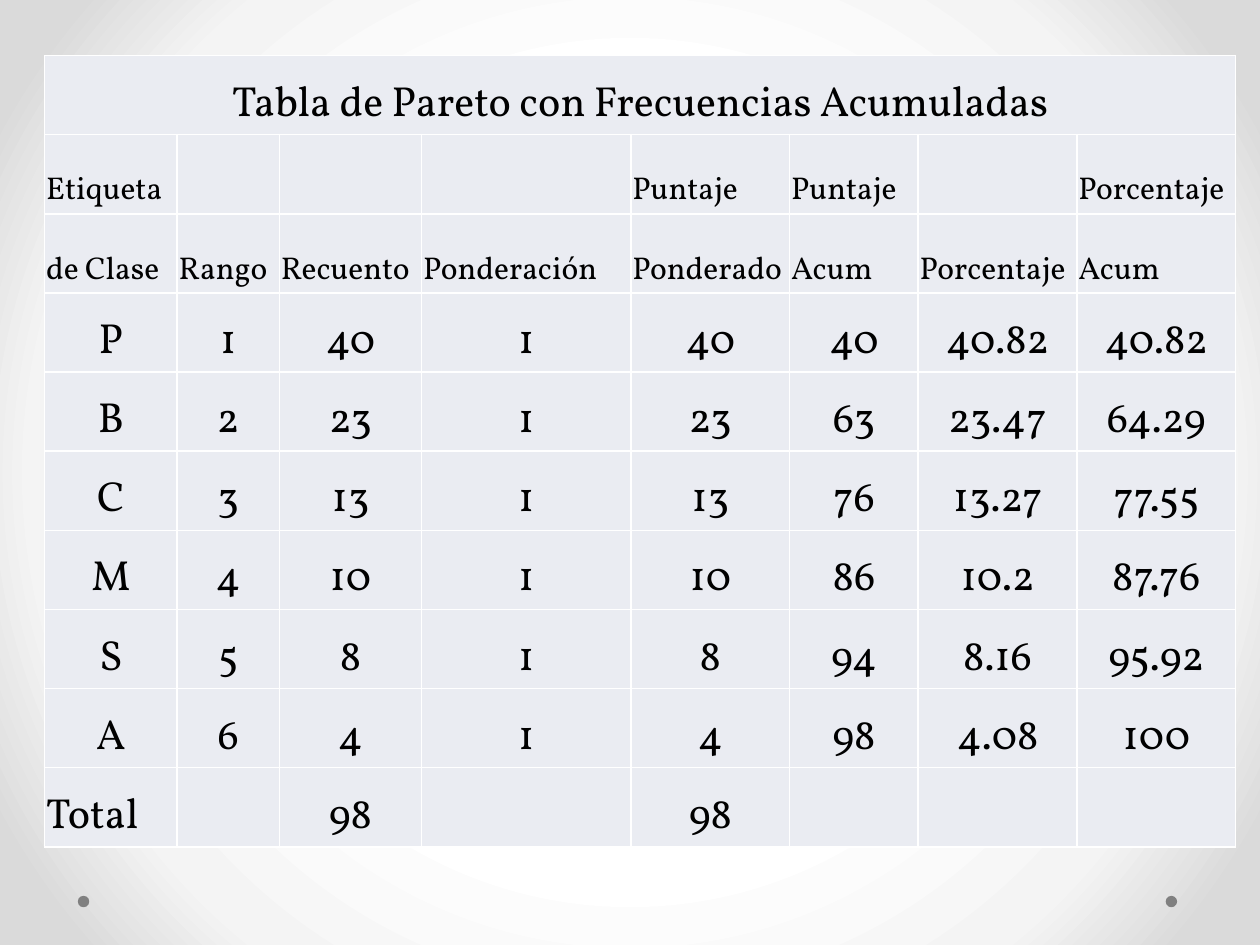
from lxml import etree
from pptx import Presentation
from pptx.dml.color import RGBColor
from pptx.enum.shapes import MSO_SHAPE
from pptx.enum.text import MSO_ANCHOR, PP_ALIGN
from pptx.oxml import parse_xml
from pptx.oxml.ns import nsdecls, qn
from pptx.util import Cm, Pt

OVAL = MSO_SHAPE.OVAL
BOTTOM = MSO_ANCHOR.BOTTOM
LEFT, CENTER = PP_ALIGN.LEFT, PP_ALIGN.CENTER

FONT = "Vollkorn"
COLORS = {
    "text": "000000",
    "cell": "EAECF2",
    "border": "FFFFFF",
    "dot": "808080",
    "center": "FFFFFF",
    "middle": "F4F4F4",
    "edge": "DADADA",
}
BACKGROUND_STOPS = [(50, "center"), (76, "middle"), (92, "edge")]

TITLE = "Tabla de Pareto con Frecuencias Acumuladas"
HEADERS = [
    ["Etiqueta", "", "", "", "Puntaje", "Puntaje", "", "Porcentaje"],
    ["de Clase", "Rango", "Recuento", "Ponderación",
     "Ponderado", "Acum", "Porcentaje", "Acum"],
]
CLASSES = [
    ["P", "1", "40", "1", "40", "40", "40.82", "40.82"],
    ["B", "2", "23", "1", "23", "63", "23.47", "64.29"],
    ["C", "3", "13", "1", "13", "76", "13.27", "77.55"],
    ["M", "4", "10", "1", "10", "86", "10.2", "87.76"],
    ["S", "5", "8", "1", "8", "94", "8.16", "95.92"],
    ["A", "6", "4", "1", "4", "98", "4.08", "100"],
]
TOTALS = ["Total", "", "98", "", "98", "", "", ""]
COLUMN_WIDTHS = [2.67, 2.06, 2.87, 4.22, 3.2, 2.59, 3.2, 3.2]
TABLE_HEIGHT = 15.95


def set_background(slide):
    """Fill the slide with a circular gradient around its center."""
    slide.background.fill.solid()
    stops = "".join(
        f'<a:gs pos="{position * 1000}"><a:srgbClr val="{COLORS[name]}"/></a:gs>'
        for position, name in BACKGROUND_STOPS
    )
    gradient = parse_xml(
        f'<a:gradFill {nsdecls("a")} rotWithShape="1"><a:gsLst>{stops}</a:gsLst>'
        '<a:path path="circle">'
        '<a:fillToRect l="50000" t="50000" r="50000" b="50000"/>'
        "</a:path></a:gradFill>"
    )
    properties = slide.element.find(".//" + qn("p:bgPr"))
    properties.replace(properties[0], gradient)


def add_dot(slide, left):
    shape = slide.shapes.add_shape(OVAL, Cm(left), Cm(18.06), Cm(0.23), Cm(0.23))
    shape.shadow.inherit = False
    shape.fill.solid()
    shape.fill.fore_color.rgb = RGBColor.from_string(COLORS["dot"])
    shape.line.fill.background()


def set_borders(cell):
    properties = cell._tc.get_or_add_tcPr()
    for index, side in enumerate(("a:lnL", "a:lnR", "a:lnT", "a:lnB")):
        line = etree.Element(qn(side), w=str(Pt(1)))
        fill = etree.SubElement(line, qn("a:solidFill"))
        etree.SubElement(fill, qn("a:srgbClr"), val=COLORS["border"])
        properties.insert(index, line)


def fill_cell(cell, text, size, alignment):
    cell.fill.solid()
    cell.fill.fore_color.rgb = RGBColor.from_string(COLORS["cell"])
    set_borders(cell)
    cell.vertical_anchor = BOTTOM
    cell.margin_left = cell.margin_right = cell.margin_top = Cm(0.03)
    cell.margin_bottom = 0
    cell.text = text
    paragraph = cell.text_frame.paragraphs[0]
    paragraph.alignment = alignment
    paragraph.font.name = FONT
    paragraph.font.size = Pt(size)
    paragraph.font.color.rgb = RGBColor.from_string(COLORS["text"])


def add_pareto_table(slide):
    title_row = [TITLE] + [""] * (len(COLUMN_WIDTHS) - 1)
    rows = [title_row, *HEADERS, *CLASSES, TOTALS]
    table = slide.shapes.add_table(
        len(rows), len(COLUMN_WIDTHS),
        Cm(0.9), Cm(1.12), Cm(sum(COLUMN_WIDTHS)), Cm(TABLE_HEIGHT),
    ).table
    table.first_row = table.horz_banding = False
    for column, width in zip(table.columns, COLUMN_WIDTHS):
        column.width = Cm(width)

    for row_index, values in enumerate(rows):
        table.rows[row_index].height = Cm(TABLE_HEIGHT / len(rows))
        is_header = values in HEADERS
        for column_index, text in enumerate(values):
            is_left = is_header or text == "Total"
            fill_cell(
                table.cell(row_index, column_index), text,
                18 if is_header else 24, LEFT if is_left else CENTER,
            )
    table.cell(0, 0).merge(table.cell(0, len(COLUMN_WIDTHS) - 1))


def main():
    presentation = Presentation()
    presentation.slide_width, presentation.slide_height = Cm(25.4), Cm(19.05)
    slide = presentation.slides.add_slide(presentation.slide_layouts[6])
    set_background(slide)
    for left in (23.5, 1.57):
        add_dot(slide, left)
    add_pareto_table(slide)
    presentation.save("out.pptx")


if __name__ == "__main__":
    main()
